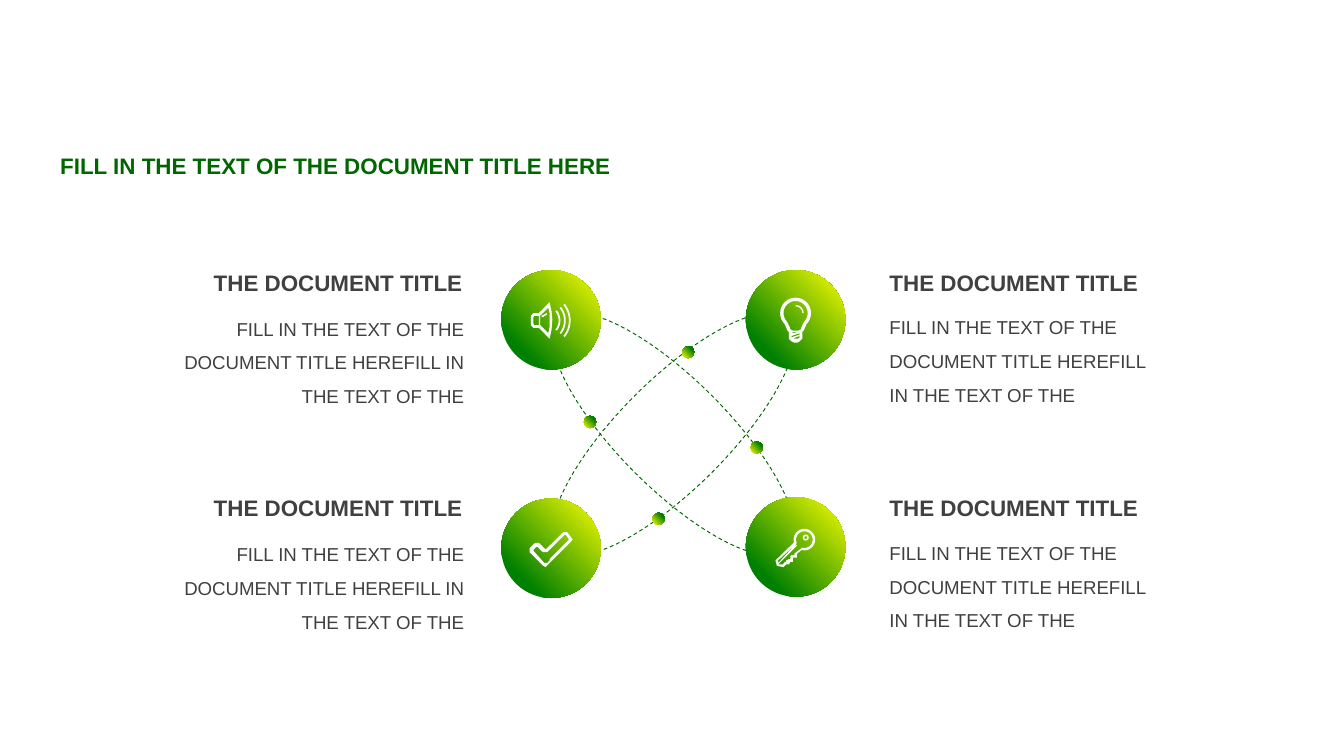
from dataclasses import dataclass
from math import cos, radians, sin

from lxml.etree import SubElement
from pptx import Presentation
from pptx.dml.color import RGBColor
from pptx.enum.dml import MSO_LINE
from pptx.enum.shapes import MSO_SHAPE as Preset
from pptx.enum.text import MSO_AUTO_SIZE as AutoSize, PP_ALIGN as Align
from pptx.oxml.ns import qn
from pptx.util import Inches, Pt


@dataclass(frozen=True)
class Theme:
    font: str = "Arial"
    heading_size: int = 12
    body_size: int = 10
    title: RGBColor = RGBColor(0x00, 0x66, 0x00)
    text: RGBColor = RGBColor(0x40, 0x40, 0x40)
    green: RGBColor = RGBColor(0x00, 0x80, 0x00)
    yellow: RGBColor = RGBColor(0xFF, 0xFF, 0x00)
    icon: RGBColor = RGBColor(0xFF, 0xFF, 0xFF)


THEME = Theme()
SLIDE_TITLE = "FILL IN THE TEXT OF THE DOCUMENT TITLE HERE"
HEADING = "THE DOCUMENT TITLE"
BODY = "FILL IN THE TEXT OF THE DOCUMENT TITLE HEREFILL IN THE TEXT OF THE"


def arc(cx, cy, radius, start, end, steps=24):
    """Points along an arc; angles in degrees, clockwise from the right."""
    angles = [radians(start + (end - start) * i / steps) for i in range(steps + 1)]
    return [(cx + radius * cos(a), cy + radius * sin(a)) for a in angles]


def band(cx, cy, inner, outer, start, end):
    return arc(cx, cy, outer, start, end) + arc(cx, cy, inner, end, start)


# Icon contours, in hundredths of an inch from the centre of the disc.
SPEAKER = [
    [(-1, -13), (0.5, -6), (1, 0), (0.5, 7), (-1, 14), (-9, 6), (-13, 6),
     (-15, 4), (-15, -3), (-13, -5), (-9, -5)],
    [(-2, -9), (-8, -3), (-8, 4), (-2, 10), (-1, 5), (-1, -5)],
    [(-9, -3), (-12.5, -3), (-13, -2), (-13, 3), (-12.5, 4), (-9, 4)],
    [(-3, -4), (-6, -2), (-7, -2), (-7, -3), (-3, -5)],
] + [band(-5, 0.5, r - 1.3, r, -39, 39) for r in (12, 16, 19.6)]

BULB = [
    arc(0, -5, 11.5, 135, 405) + [
        (6, 8), (5, 9), (5, 14), (3, 16), (1, 17), (-1, 17), (-3, 16),
        (-5, 14), (-5, 9), (-6, 8)],
    arc(0, -5, 9, 135, 405) + [
        (4.5, 5), (4, 7), (2, 8), (-2, 8), (-4, 7), (-4.5, 5)],
    band(0, -5, 5, 6, -90, 0),
    [(-3, 10), (2, 9), (-2, 9)],
    [(-3, 13), (3, 11), (3, 10), (-3, 12)],
    [(-2, 14), (2, 14), (3, 13), (3, 12)],
]

KEY = [
    arc(6.5, -5.5, 8, 165, 465) + [
        (1, 5), (1, 8), (-2, 8), (-2, 11), (-4, 11), (-5, 13), (-7, 13),
        (-9, 15), (-14, 14), (-15, 10)],
    arc(6.5, -5.5, 6.2, 155, 465) + [
        (-1, 5), (-1, 6), (-3, 6), (-4, 7), (-4, 9), (-5, 9), (-7, 10),
        (-7, 11), (-8, 11), (-9.5, 13), (-13, 13), (1, -1), (0, -2),
        (-13, 12), (-13, 10)],
    arc(7.5, -7, 2.2, 0, 360),
    arc(7.5, -7, 1.1, 0, 360),
]

CHECK = [
    [(16, -6.5), (15, -5), (-3, 13), (-4, 14), (-6, 13), (-16, 3), (-16, 0),
     (-12, -4), (-9, -4), (-4, 1), (9, -12), (12, -12), (15, -8)],
    [(13, -7), (11, -10), (10, -10), (-3, 3), (-6, 3), (-10, -1), (-11, -1),
     (-13, 1), (-13, 2), (-5, 11), (-3, 11), (-1, 9), (-1, 8), (13, -6)],
]


def add_oval(slide, cx, cy, width, height):
    oval = slide.shapes.add_shape(
        Preset.OVAL, Inches(cx - width / 2), Inches(cy - height / 2),
        Inches(width), Inches(height))
    oval.shadow.inherit = False
    return oval


def add_gradient_circle(slide, cx, cy, diameter, radial=False):
    """Circle shaded green to yellow; radial shading starts at the top right."""
    circle = add_oval(slide, cx, cy, diameter, diameter)
    circle.line.fill.background()
    fill = circle.fill
    fill.gradient()
    fill.gradient_angle = 45
    stops = ((0.2, THEME.green), (1, THEME.yellow))
    for stop, (position, color) in zip(fill.gradient_stops, stops):
        stop.position = position
        stop.color.rgb = color
    if radial:
        gradient = circle._element.spPr.find(qn("a:gradFill"))
        gradient.remove(gradient.find(qn("a:lin")))
        shade = SubElement(gradient, qn("a:path"), path="circle")
        SubElement(shade, qn("a:fillToRect"), l="100000", b="100000")


def add_icon(slide, cx, cy, contours):
    placed = [[(Inches(cx + x / 100), Inches(cy + y / 100)) for x, y in contour]
              for contour in contours]
    builder = slide.shapes.build_freeform(*placed[0][0])
    for index, (start, *others) in enumerate(placed):
        if index:
            builder.move_to(*start)
        builder.add_line_segments(others, close=True)
    icon = builder.convert_to_shape()
    icon.shadow.inherit = False
    icon.fill.solid()
    icon.fill.fore_color.rgb = THEME.icon
    icon.line.fill.background()


def add_text(slide, box, text, size, color, bold=False, align=Align.LEFT,
             spacing=None, wrap=True):
    frame = slide.shapes.add_textbox(*map(Inches, box)).text_frame
    frame.word_wrap = wrap
    frame.auto_size = AutoSize.SHAPE_TO_FIT_TEXT
    frame.text = text
    paragraph = frame.paragraphs[0]
    paragraph.alignment = align
    if spacing:
        paragraph.line_spacing = spacing
    font = paragraph.runs[0].font
    font.name, font.size, font.bold = THEME.font, Pt(size), bold
    font.color.rgb = color


def add_orbits(slide, cx, cy):
    for angle in (-45, 45):
        orbit = add_oval(slide, cx, cy, 2.42, 0.81)
        orbit.rotation = angle
        orbit.fill.background()
        orbit.line.color.rgb = THEME.title
        orbit.line.width = Pt(0.5)
        orbit.line.dash_style = MSO_LINE.DASH
    for dx, dy in ((-0.62, -0.09), (0.62, 0.1), (-0.11, 0.63), (0.11, -0.61)):
        add_gradient_circle(slide, cx + dx, cy + dy, 0.09, radial=True)


def add_caption(slide, left, top, width, body_left, body_top, body_width, align):
    add_text(slide, (left, top, width, 0.3), HEADING, THEME.heading_size,
             THEME.text, bold=True, align=align)
    add_text(slide, (body_left, body_top, body_width, 0.86), BODY,
             THEME.body_size, THEME.text, align=align, spacing=1.5)


def add_topic(slide, cx, cy, contours):
    add_gradient_circle(slide, cx, cy, 0.74)
    add_icon(slide, cx, cy, contours)


def main():
    presentation = Presentation()
    presentation.slide_width = Inches(10)
    presentation.slide_height = presentation.slide_width * 9 // 16
    slide = presentation.slides.add_slide(presentation.slide_layouts[6])

    add_orbits(slide, 5.01, 3.23)
    for cx, cy, contours in ((4.1, 2.38, SPEAKER), (5.92, 2.38, BULB),
                             (5.92, 4.07, KEY), (4.1, 4.08, CHECK)):
        add_topic(slide, cx, cy, contours)
    for top in (1.95, 3.63):
        add_caption(slide, 6.52, top, 2.27, 6.52, top + 0.27, 2.27, Align.LEFT)
        add_caption(slide, 1.14, top, 2.4, 1.22, top + 0.28, 2.33, Align.RIGHT)
    add_text(slide, (0.35, 1.08, 4.43, 0.3), SLIDE_TITLE, THEME.heading_size,
             THEME.title, bold=True, wrap=False)

    presentation.save("out.pptx")


if __name__ == "__main__":
    main()
